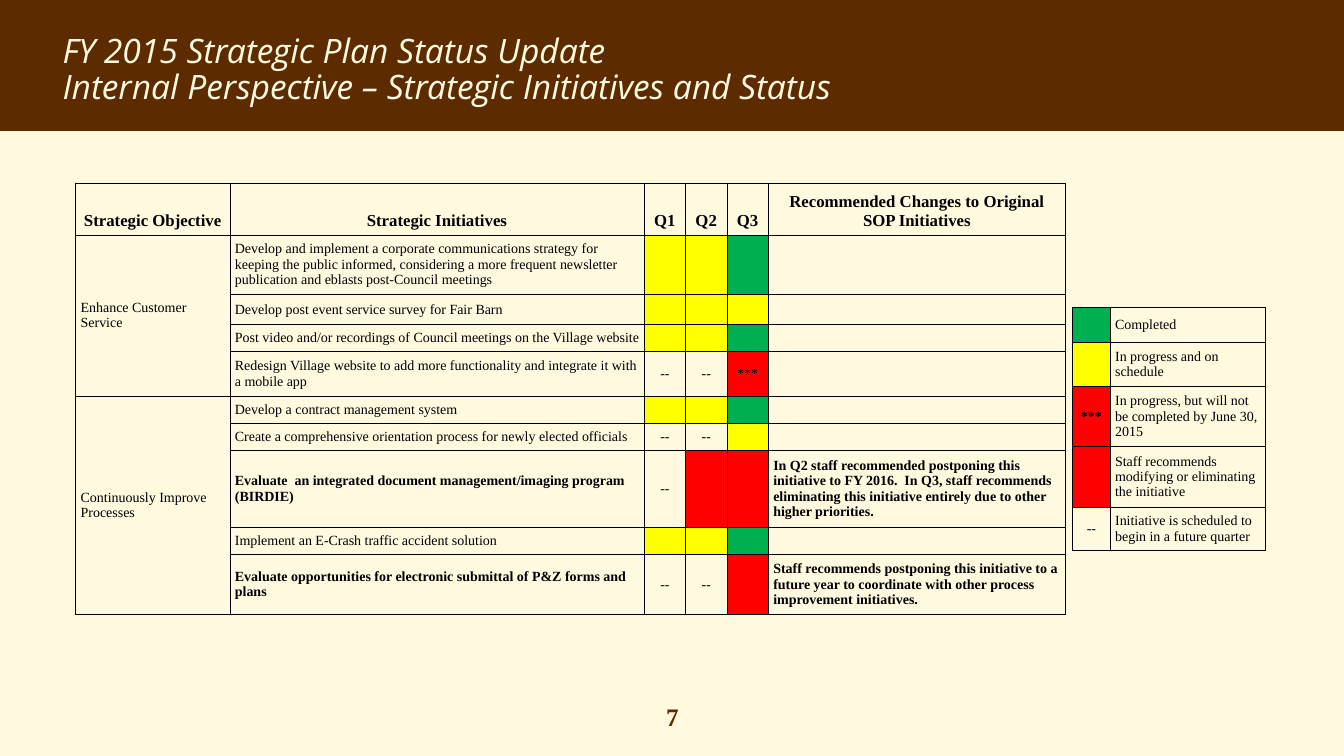
"""Build the FY 2015 strategic initiatives status slide."""
from dataclasses import dataclass

from lxml.etree import SubElement
from pptx import Presentation
from pptx.dml.color import RGBColor as RGB
from pptx.enum.shapes import MSO_SHAPE as SHAPE
from pptx.enum.text import MSO_ANCHOR as ANCHOR, MSO_AUTO_SIZE as AUTOSIZE, PP_ALIGN as ALIGN
from pptx.oxml.ns import qn
from pptx.util import Inches, Pt


@dataclass(frozen=True)
class Theme:
    cream: str = "FFF9DF"
    brown: str = "5D2B00"
    ink: str = "000000"
    green: str = "00B050"
    yellow: str = "FFFF00"
    red: str = "FF0000"
    title_font: str = "Open Sans"
    body_font: str = "Times New Roman"
    title: int = 24
    number: int = 18
    header: int = 12
    body: int = 10
    border: float = 0.5
    inset: float = 0.05


T = Theme()
TITLE = ["FY 2015 Strategic Plan Status Update",
         "Internal Perspective – Strategic Initiatives and Status"]
PAGE = "7"
STATUS = {"done": ("", T.green), "on track": ("", T.yellow), "late": ("***", T.red),
          "modify": ("", T.red), "future": ("--", None)}
HEADERS = ["Strategic Objective", "Strategic Initiatives", "Q1", "Q2", "Q3",
           "Recommended Changes to Original SOP Initiatives"]
OBJECTIVES = {
    "Enhance Customer Service": [
        ("Develop and implement a corporate communications strategy for keeping the public "
         "informed, considering a more frequent newsletter publication and eblasts "
         "post-Council meetings", ("on track", "on track", "done"), ""),
        ("Develop post event service survey for Fair Barn",
         ("on track", "on track", "on track"), ""),
        ("Post video and/or recordings of Council meetings on the Village website",
         ("on track", "on track", "done"), ""),
        ("Redesign Village website to add more functionality and integrate it with a mobile app",
         ("future", "future", "late"), ""),
    ],
    "Continuously Improve Processes": [
        ("Develop a contract management system", ("on track", "on track", "done"), ""),
        ("Create a comprehensive orientation process for newly elected officials",
         ("future", "future", "on track"), ""),
        ("Evaluate  an integrated document management/imaging program (BIRDIE)",
         ("future", "modify", "modify"),
         "In Q2 staff recommended postponing this initiative to FY 2016.  In Q3, staff recommends "
         "eliminating this initiative entirely due to other higher priorities."),
        ("Implement an E-Crash traffic accident solution", ("on track", "on track", "done"), ""),
        ("Evaluate opportunities for electronic submittal of P&Z forms and plans",
         ("future", "future", "modify"),
         "Staff recommends postponing this initiative to a future year to coordinate with other "
         "process improvement initiatives."),
    ],
}
LEGEND = [("done", "Completed"),
          ("on track", "In progress and on schedule"),
          ("late", "In progress, but will not be completed by June 30, 2015"),
          ("modify", "Staff recommends modifying or eliminating the initiative"),
          ("future", "Initiative is scheduled to begin in a future quarter")]
PLAN_COLS = [1.53, 4.11, 0.41, 0.41, 0.41, 2.95]
PLAN_ROWS = [0.51, 0.59, 0.3, 0.27, 0.44, 0.27, 0.27, 0.76, 0.27, 0.6]
LEGEND_COLS = [0.37, 1.54]
LEGEND_ROWS = [0.35, 0.43, 0.6, 0.6, 0.43]


def add_text(p, text, size, color=T.ink, font=T.body_font, bold=False, italic=False):
    r = p.add_run()
    r.text = text
    r.font.name, r.font.size = font, Pt(size)
    r.font.bold, r.font.italic = bold, italic
    r.font.color.rgb = RGB.from_string(color)


def add_grid(s, left, top, cols, rows):
    frame = s.shapes.add_table(len(rows), len(cols), Inches(left), Inches(top),
                               Inches(sum(cols)), Inches(sum(rows)))
    table = frame.table
    table.first_row = table.horz_banding = False
    for col, width in zip(table.columns, cols):
        col.width = Inches(width)
    for row, height in zip(table.rows, rows):
        row.height = Inches(height)
    return table


def fill_cell(cell, text="", fill=None, size=T.body, bold=False, center=False, anchor=ANCHOR.MIDDLE):
    cell.margin_left = cell.margin_right = Inches(T.inset)
    cell.margin_top = cell.margin_bottom = Inches(T.inset)
    cell.vertical_anchor = anchor
    props = cell._tc.get_or_add_tcPr()
    for side in ("lnL", "lnR", "lnT", "lnB"):
        line = SubElement(props, qn(f"a:{side}"), w=str(Pt(T.border)))
        SubElement(SubElement(line, qn("a:solidFill")), qn("a:srgbClr"), val=T.ink)
    if fill:
        cell.fill.solid()
        cell.fill.fore_color.rgb = RGB.from_string(fill)
    else:
        cell.fill.background()
    p = cell.text_frame.paragraphs[0]
    p.alignment = ALIGN.CENTER if center else ALIGN.LEFT
    if text:
        add_text(p, text, size, bold=bold)
    else:
        SubElement(p._p, qn("a:endParaRPr"), sz=str(size * 100))


def add_header(prs, s):
    band = s.shapes.add_shape(SHAPE.RECTANGLE, 0, 0, prs.slide_width, Inches(1.3))
    band.shadow.inherit = False
    band.fill.solid()
    band.fill.fore_color.rgb = RGB.from_string(T.brown)
    band.line.fill.background()
    s.shapes._spTree.insert(2, band._element)
    title = s.shapes.title
    title.left, title.top, title.width, title.height = map(Inches, (0.52, 0.25, 12.29, 0.91))
    tf = title.text_frame
    tf.auto_size, tf.vertical_anchor, tf.word_wrap = AUTOSIZE.NONE, ANCHOR.MIDDLE, True
    for i, text in enumerate(TITLE):
        p = tf.add_paragraph() if i else tf.paragraphs[0]
        p.alignment, p.line_spacing = ALIGN.LEFT, 0.88
        add_text(p, text, T.title, T.cream, T.title_font, italic=True)


def add_plan(s):
    table = add_grid(s, 0.75, 1.82, PLAN_COLS, PLAN_ROWS)
    for col, text in enumerate(HEADERS):
        fill_cell(table.cell(0, col), text, size=T.header, bold=True, center=True,
                  anchor=ANCHOR.BOTTOM)
    row = 1
    for objective, initiatives in OBJECTIVES.items():
        first = row
        for initiative, quarters, change in initiatives:
            fill_cell(table.cell(row, 0), objective if row == first else "")
            fill_cell(table.cell(row, 1), initiative, bold=bool(change))
            for col, status in enumerate(quarters, 2):
                fill_cell(table.cell(row, col), *STATUS[status], center=True)
            fill_cell(table.cell(row, 5), change, bold=True)
            row += 1
        table.cell(first, 0).merge(table.cell(row - 1, 0))


def add_legend(s):
    table = add_grid(s, 10.64, 3.05, LEGEND_COLS, LEGEND_ROWS)
    for row, (status, meaning) in enumerate(LEGEND):
        fill_cell(table.cell(row, 0), *STATUS[status], bold=status == "late", center=True)
        fill_cell(table.cell(row, 1), meaning)


def add_page_number(s):
    box = s.shapes.add_textbox(Inches(6.17), Inches(6.91), Inches(1), Inches(0.4))
    tf = box.text_frame
    tf.word_wrap = True
    p = tf.paragraphs[0]
    p.alignment = ALIGN.CENTER
    add_text(p, PAGE, T.number, T.brown, bold=True)


def main():
    prs = Presentation()
    prs.slide_width, prs.slide_height = Inches(13.33), Inches(7.5)
    s = prs.slides.add_slide(prs.slide_layouts[5])
    s.background.fill.solid()
    s.background.fill.fore_color.rgb = RGB.from_string(T.cream)
    add_header(prs, s)
    add_plan(s)
    add_legend(s)
    add_page_number(s)
    prs.save("out.pptx")


if __name__ == "__main__":
    main()
